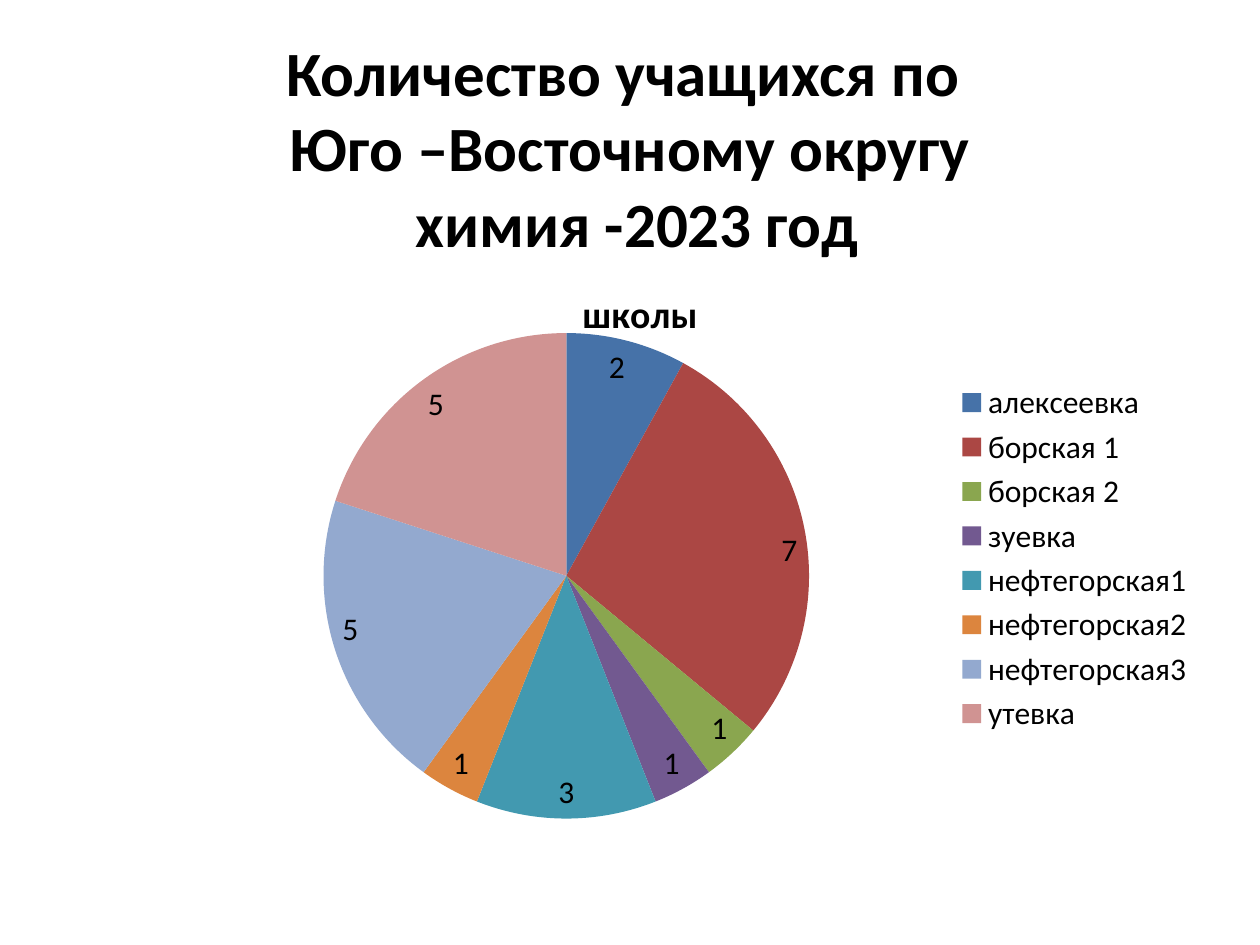
from dataclasses import dataclass

from pptx import Presentation
from pptx.chart.data import CategoryChartData
from pptx.dml.color import RGBColor
from pptx.enum.chart import XL_CHART_TYPE as ChartType
from pptx.enum.chart import XL_LABEL_POSITION as LabelPosition
from pptx.enum.chart import XL_LEGEND_POSITION as LegendPosition
from pptx.enum.text import MSO_ANCHOR as Anchor
from pptx.enum.text import PP_ALIGN as Align
from pptx.oxml import parse_xml
from pptx.oxml.ns import nsdecls, qn
from pptx.util import Inches, Pt


@dataclass(frozen=True)
class Theme:
    font: str = "Calibri"
    ink: str = "000000"
    heading_size: float = 36
    chart_title_size: float = 21.6
    chart_size: float = 18
    slices: tuple = ("4672A8", "AB4744", "8AA64F", "725990",
                     "4299B0", "DC853E", "93A9CF", "D09392")


SCHOOLS = {
    "алексеевка": 2,
    "борская 1": 7,
    "борская 2": 1,
    "зуевка": 1,
    "нефтегорская1": 3,
    "нефтегорская2": 1,
    "нефтегорская3": 5,
    "утевка": 5,
}


def write_text(frame, text, *, font, size, color, bold=False, align=Align.CENTER):
    """Put one paragraph in a frame; "\\v" makes a line break."""
    para = frame.paragraphs[0]
    para.text = text
    para.alignment = align
    for span in para.runs:
        set_font(span.font, font, size, color, bold)


def set_font(target, font, size, color, bold=False):
    target.name = font
    target.size = Pt(size)
    target.bold = bold
    target.color.rgb = RGBColor.from_string(color)


class PageBuilder:
    def __init__(self, page, theme):
        self.page = page
        self.theme = theme

    def heading(self, text, left, top, width, height):
        box = self.page.shapes.add_textbox(
            Inches(left), Inches(top), Inches(width), Inches(height))
        frame = box.text_frame
        frame.word_wrap = True
        frame.vertical_anchor = Anchor.MIDDLE
        write_text(frame, text, font=self.theme.font, color=self.theme.ink,
                   size=self.theme.heading_size, bold=True)

    def pie(self, title, values, left, top, width, height, plot_area):
        theme = self.theme
        data = CategoryChartData()
        data.categories = list(values)
        data.add_series(title, list(values.values()))
        chart = self.page.shapes.add_chart(
            ChartType.PIE, Inches(left), Inches(top),
            Inches(width), Inches(height), data).chart
        set_font(chart.font, theme.font, theme.chart_size, theme.ink)

        # Chart title and legend
        chart.has_title = True
        write_text(chart.chart_title.text_frame, title, font=theme.font,
                   size=theme.chart_title_size, color=theme.ink, bold=True)
        chart.has_legend = True
        chart.legend.position = LegendPosition.RIGHT
        chart.legend.include_in_layout = False

        # Slices and their values
        plot = chart.plots[0]
        plot.vary_by_categories = True
        for index, color in enumerate(theme.slices):
            fill = plot.series[0].points[index].format.fill
            fill.solid()
            fill.fore_color.rgb = RGBColor.from_string(color)
        plot.has_data_labels = True
        labels = plot.data_labels
        labels.show_value = True
        labels.position = LabelPosition.INSIDE_END
        set_font(labels.font, theme.font, theme.chart_size, theme.ink)
        self.place_plot(chart, plot_area)

    @staticmethod
    def place_plot(chart, plot_area):
        """Fix the inner plot area as fractions of the chart."""
        area = chart._chartSpace.chart.plotArea
        for old in area.findall(qn("c:layout")):
            area.remove(old)
        sides = "".join(f'<c:{name} val="{value}"/>'
                        for name, value in zip("xywh", plot_area))
        area.insert(0, parse_xml(
            f'<c:layout {nsdecls("c")}><c:manualLayout>'
            '<c:layoutTarget val="inner"/>'
            '<c:xMode val="edge"/><c:yMode val="edge"/>'
            f'{sides}</c:manualLayout></c:layout>'))


def main():
    deck = Presentation()
    deck.slide_width, deck.slide_height = Inches(10), Inches(7.5)
    page = deck.slides.add_slide(deck.slide_layouts[6])
    builder = PageBuilder(page, Theme())

    # Heading
    builder.heading(
        "Количество учащихся по \vЮго –Восточному округу\v химия -2023 год",
        0.5, 0.25, 9, 1.83)

    # Pupils by school
    builder.pie("школы", SCHOOLS, 0.58, 2.08, 9, 4.7,
                plot_area=(0.21, 0.12, 0.45, 0.82))

    deck.save("out.pptx")


if __name__ == "__main__":
    main()
